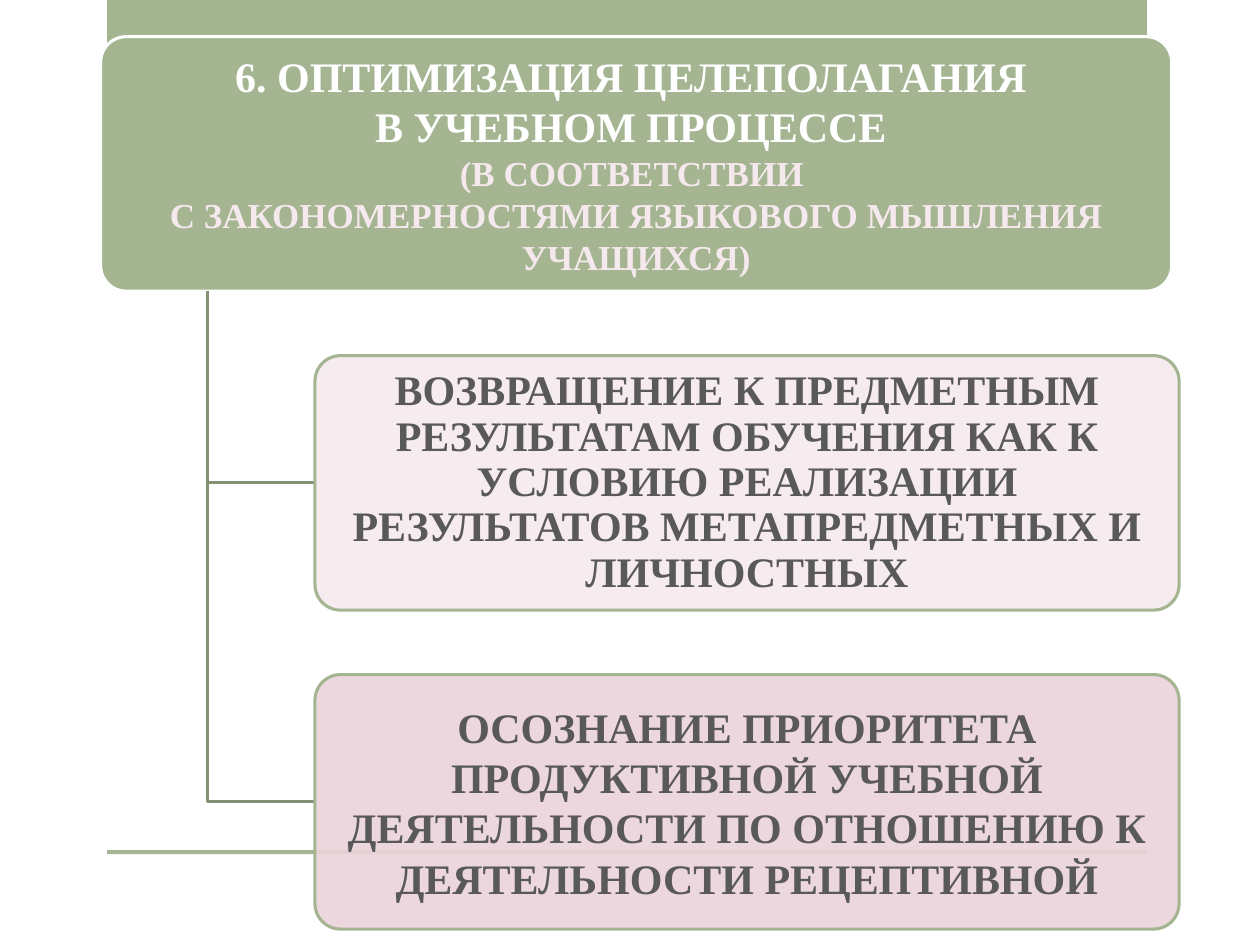
"""Build a slide with a heading box and two goals branching from it."""
from lxml.etree import SubElement
from pptx import Presentation
from pptx.dml.color import RGBColor
from pptx.enum.shapes import MSO_SHAPE
from pptx.enum.text import MSO_ANCHOR, PP_ALIGN
from pptx.oxml.ns import qn
from pptx.util import Cm, Pt

GREEN, DARK_GREEN, WHITE, PALE_PINK, PINK, GREY = (
    "A5B592", "849175", "FFFFFF", "F6E9ED", "ECD3DC", "595959")

HEADING = [
    ("6. ОПТИМИЗАЦИЯ ЦЕЛЕПОЛАГАНИЯ ", 24, WHITE),
    ("В УЧЕБНОМ ПРОЦЕССЕ ", 24, WHITE),
    ("(В СООТВЕТСТВИИ ", 20, PALE_PINK),
    ("С ЗАКОНОМЕРНОСТЯМИ ЯЗЫКОВОГО МЫШЛЕНИЯ УЧАЩИХСЯ)", 20, PALE_PINK),
]
GOALS = [
    ("ВОЗВРАЩЕНИЕ К ПРЕДМЕТНЫМ РЕЗУЛЬТАТАМ ОБУЧЕНИЯ КАК К УСЛОВИЮ РЕАЛИЗАЦИИ "
     "РЕЗУЛЬТАТОВ МЕТАПРЕДМЕТНЫХ И ЛИЧНОСТНЫХ", PALE_PINK, 0.9),
    ("ОСОЗНАНИЕ ПРИОРИТЕТА ПРОДУКТИВНОЙ УЧЕБНОЙ ДЕЯТЕЛЬНОСТИ ПО ОТНОШЕНИЮ К "
     "ДЕЯТЕЛЬНОСТИ РЕЦЕПТИВНОЙ", PINK, None),
]
BARS = [(0, 1.07), (17.14, 0.08)]
BAR_LEFT, BAR_WIDTH = 2.16, 20.96
BOX_TOP, BOX_HEIGHT, BOX_STEP = 0.74, 5.13, 6.43
HEADING_LEFT, HEADING_WIDTH = 2.03, 21.59
GOAL_LEFT, GOAL_WIDTH = 6.35, 17.42
TRUNK_LEFT = HEADING_LEFT + HEADING_WIDTH / 10


def color(value):
    return RGBColor.from_string(value)


def set_line(shape, value):
    shape.line.color.rgb = color(value)
    shape.line.width = Pt(1.75)
    shape.shadow.inherit = False


def add_filled(slide, kind, left, top, width, height, fill):
    shape = slide.shapes.add_shape(kind, Cm(left), Cm(top), Cm(width), Cm(height))
    shape.shadow.inherit = False
    shape.fill.solid()
    shape.fill.fore_color.rgb = color(fill)
    return shape


def add_box(slide, left, top, width, fill, line, paragraphs, spacing=None):
    box = add_filled(slide, MSO_SHAPE.ROUNDED_RECTANGLE, left, top, width, BOX_HEIGHT, fill)
    box.adjustments[0] = 0.1
    set_line(box, line)
    frame = box.text_frame
    frame.word_wrap = True
    frame.vertical_anchor = MSO_ANCHOR.MIDDLE
    frame.margin_left = frame.margin_right = Cm(0.13)
    frame.margin_top = frame.margin_bottom = Cm(0.08)
    frame.text = "\n".join(text for text, _, _ in paragraphs)
    for paragraph, (_, size, font_color) in zip(frame.paragraphs, paragraphs):
        paragraph.alignment = PP_ALIGN.CENTER
        paragraph.line_spacing = spacing
        font = paragraph.runs[0].font
        font.name, font.size, font.bold = "Times New Roman", Pt(size), True
        font.color.rgb = color(font_color)
    return box


def set_opacity(shape, percent):
    fill_color = shape.fill._xPr.find(qn("a:solidFill"))[0]
    SubElement(fill_color, qn("a:alpha")).set("val", str(percent * 1000))


def add_branch(slide, bottom):
    builder = slide.shapes.build_freeform(Cm(TRUNK_LEFT), Cm(BOX_TOP + BOX_HEIGHT))
    builder.add_line_segments(
        [(Cm(TRUNK_LEFT), Cm(bottom)), (Cm(GOAL_LEFT), Cm(bottom))], close=False)
    branch = builder.convert_to_shape()
    branch.fill.background()
    set_line(branch, DARK_GREEN)


def main():
    presentation = Presentation()
    presentation.slide_width, presentation.slide_height = Cm(25.4), Cm(19.05)
    slide = presentation.slides.add_slide(presentation.slide_layouts[6])
    for top, height in BARS:
        bar = add_filled(slide, MSO_SHAPE.RECTANGLE, BAR_LEFT, top, BAR_WIDTH, height, GREEN)
        bar.line.fill.background()
    add_box(slide, HEADING_LEFT, BOX_TOP, HEADING_WIDTH, GREEN, WHITE, HEADING)
    for row, (text, fill, spacing) in enumerate(GOALS, start=1):
        top = BOX_TOP + row * BOX_STEP
        add_branch(slide, top + BOX_HEIGHT / 2)
        box = add_box(slide, GOAL_LEFT, top, GOAL_WIDTH, fill, GREEN,
                      [(text, 24, GREY)], spacing)
        set_opacity(box, 90)
    presentation.save("out.pptx")


if __name__ == "__main__":
    main()
